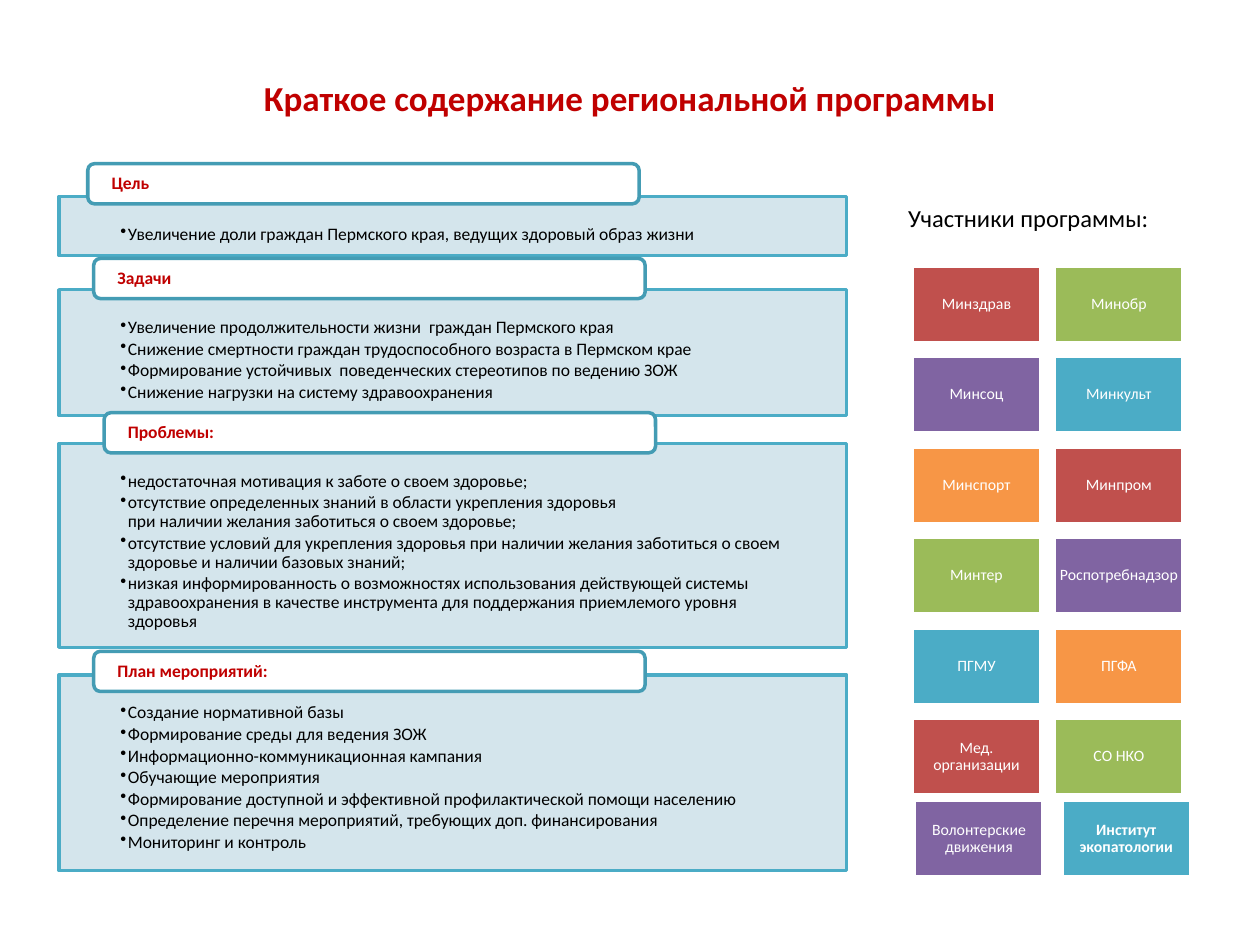
from copy import deepcopy
from dataclasses import dataclass

from lxml import etree
from pptx import Presentation
from pptx.dml.color import RGBColor
from pptx.enum.shapes import MSO_SHAPE
from pptx.enum.text import MSO_ANCHOR, PP_ALIGN
from pptx.oxml.ns import qn
from pptx.util import Cm, Pt

RECT, ROUND = MSO_SHAPE.RECTANGLE, MSO_SHAPE.ROUNDED_RECTANGLE
TOP, MIDDLE = MSO_ANCHOR.TOP, MSO_ANCHOR.MIDDLE
LEFT, CENTER = PP_ALIGN.LEFT, PP_ALIGN.CENTER


@dataclass(frozen=True)
class Theme:
    """Colours, font and type sizes of the slide."""
    font: str = "Calibri"
    title_size: int = 20
    heading_size: int = 14
    body_size: int = 10
    tile_size: int = 9
    accent: str = "C00000"
    text: str = "000000"
    white: str = "FFFFFF"
    panel: str = "D0E3EA"
    panel_line: str = "4BACC6"
    tab_line: str = "449CB4"
    tiles: tuple = ("C0504D", "9BBB59", "8064A2", "4BACC6", "F79646")


THEME = Theme()
DEFAULT_INSETS = (0.25, 0.13, 0.25, 0.13)

SECTIONS = [
    (3.96, 1.19, 0.58, 0.66, "Цель", [
        "Увеличение доли граждан Пермского края, ведущих здоровый образ жизни",
    ]),
    (5.84, 2.54, 0.7, 0.63, "Задачи", [
        "Увеличение продолжительности жизни  граждан Пермского края",
        "Снижение смертности граждан трудоспособного возраста в Пермском крае",
        "Формирование устойчивых  поведенческих стереотипов по ведению ЗОЖ",
        "Снижение нагрузки на систему здравоохранения",
    ]),
    (8.94, 4.11, 0.91, 0.62, "Проблемы:", [
        "недостаточная мотивация к заботе о своем здоровье;",
        "отсутствие определенных знаний в области укрепления здоровья \n"
        "при наличии желания заботиться о своем здоровье;",
        "отсутствие условий для укрепления здоровья при наличии желания "
        "заботиться о своем здоровье и наличии базовых знаний;",
        "низкая информированность о возможностях использования действующей "
        "системы здравоохранения в качестве инструмента для поддержания "
        "приемлемого уровня здоровья",
    ]),
    (13.61, 3.94, 0.7, 0.48, "План мероприятий:", [
        "Создание нормативной базы",
        "Формирование среды для ведения ЗОЖ",
        "Информационно-коммуникационная кампания",
        "Обучающие мероприятия",
        "Формирование доступной и эффективной профилактической помощи населению",
        "Определение перечня мероприятий, требующих доп. финансирования",
        "Мониторинг и контроль",
    ]),
]

PARTICIPANTS = [
    "Минздрав", "Минобр", "Минсоц", "Минкульт", "Минспорт", "Минпром",
    "Минтер", "Роспотребнадзор", "ПГМУ", "ПГФА", "Мед. организации", "СО НКО",
]
EXTRA_PARTICIPANTS = [("Волонтерские движения", False),
                      ("Институт экопатологии", True)]


def add_bullet(p):
    """Give a paragraph a hanging bullet."""
    p.level = 1
    pPr = p._p.get_or_add_pPr()
    pPr.set("marL", str(Cm(0.15)))
    pPr.set("indent", str(-Cm(0.15)))
    etree.SubElement(pPr, qn("a:buChar")).set("char", "•")


def write(sp, *lines, size, color, bold=False, align=LEFT, anchor=TOP,
          insets=DEFAULT_INSETS, spacing=None, after=0, bullet=False):
    """Fill a shape with formatted paragraphs."""
    tf = sp.text_frame
    tf.word_wrap = True
    tf.vertical_anchor = anchor
    tf.margin_left, tf.margin_top, tf.margin_right, tf.margin_bottom = map(Cm, insets)
    for i, line in enumerate(lines):
        p = tf.add_paragraph() if i else tf.paragraphs[0]
        p.text = line
        p.alignment = align
        p.line_spacing = spacing
        p.space_after = Pt(after)
        if bullet:
            add_bullet(p)
        for r in p.runs:
            r.font.name, r.font.size, r.font.bold = THEME.font, Pt(size), bold
            r.font.color.rgb = RGBColor.from_string(color)
        for br in p._p.findall(qn("a:br")):
            br.append(deepcopy(p.runs[0]._r.rPr))


def add_box(s, kind, x, y, w, h, fill, line, alpha=None):
    """Add a filled, outlined shape, with opacity in percent if given."""
    sp = s.shapes.add_shape(kind, Cm(x), Cm(y), Cm(w), Cm(h))
    sp.shadow.inherit = False
    sp.fill.solid()
    sp.fill.fore_color.rgb = RGBColor.from_string(fill)
    sp.line.color.rgb = RGBColor.from_string(line)
    sp.line.width = Pt(2)
    if alpha:
        color = sp._element.spPr.find(qn("a:solidFill"))[0]
        etree.SubElement(color, qn("a:alpha")).set("val", str(alpha * 1000))
    return sp


def add_label(s, x, y, w, h, text, **style):
    """Add a text box with one paragraph."""
    sp = s.shapes.add_textbox(Cm(x), Cm(y), Cm(w), Cm(h))
    write(sp, text, **style)


def add_section(s, x, y, w, h, tab_dx, tab_rise, heading, items):
    """Add a bulleted panel with a heading tab over its top edge."""
    panel = add_box(s, RECT, x, y, w, h, THEME.panel, THEME.panel_line, alpha=90)
    write(panel, *items, size=THEME.body_size, color=THEME.text, spacing=0.9,
          after=1.5, bullet=True, insets=(1.24, 0.58, 1.24, 0.2))
    tab = add_box(s, ROUND, x + tab_dx, y - tab_rise, 0.7 * w, 0.81,
                  THEME.white, THEME.tab_line)
    write(tab, heading, size=THEME.body_size, color=THEME.accent, bold=True,
          anchor=MIDDLE, spacing=0.9, insets=(0.44, 0, 0.44, 0))


def add_tile(s, x, y, text, color, bold=False):
    """Add one participant tile."""
    sp = add_box(s, RECT, x, y, 2.59, 1.55, color, THEME.white)
    write(sp, text, size=THEME.tile_size, color=THEME.white, bold=bold,
          align=CENTER, anchor=MIDDLE, spacing=0.9, insets=(0.1,) * 4)


def add_participants(s, x, y, w):
    """Add the participants heading, the tile grid and the closing row."""
    add_label(s, x, y, w, 0.86, "Участники программы:",
              size=THEME.heading_size, color=THEME.text)
    n = len(THEME.tiles)
    for i, name in enumerate(PARTICIPANTS):
        row, col = divmod(i, 2)
        add_tile(s, x + 0.33 + col * 2.87, y + 1.4 + row * 1.824,
                 name, THEME.tiles[i % n])
    for col, (name, bold) in enumerate(EXTRA_PARTICIPANTS):
        add_tile(s, x + 0.38 + col * 2.97, y + 12.17, name,
                 THEME.tiles[(len(PARTICIPANTS) + col) % n], bold)


def main():
    """Build and save the slide."""
    prs = Presentation()
    prs.slide_width, prs.slide_height = Cm(25.4), Cm(19.05)
    s = prs.slides.add_slide(prs.slide_layouts[6])
    add_label(s, 1.27, 0.76, 22.86, 2.41, "Краткое содержание региональной программы",
              size=THEME.title_size, color=THEME.accent, bold=True,
              align=CENTER, anchor=MIDDLE)
    for y, h, *content in SECTIONS:
        add_section(s, 1.19, y, 15.88, h, *content)
    add_participants(s, 18.06, 3.96, 5.94)
    prs.save("out.pptx")


if __name__ == "__main__":
    main()
